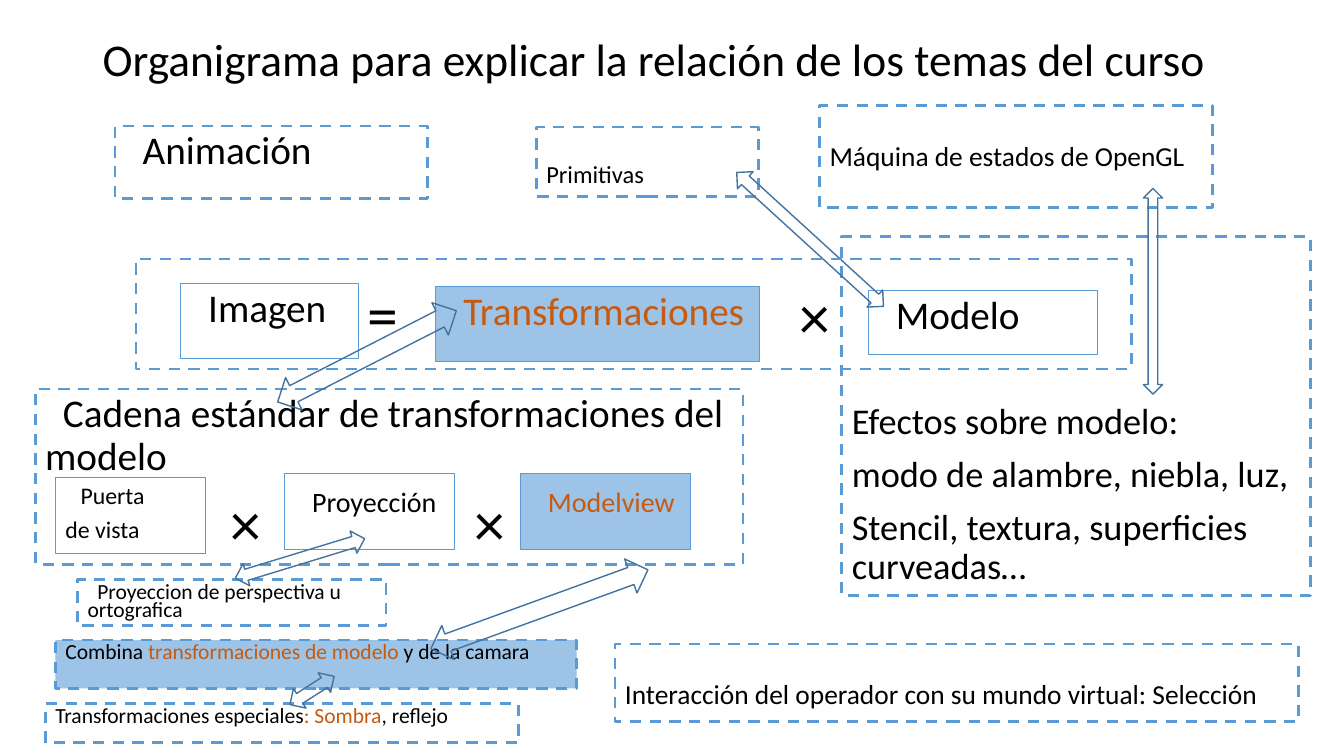
from pptx import Presentation
from pptx import util as u
from pptx.dml.color import RGBColor
from pptx.enum import dml, shapes, text

WIDE, HIGH = 13.33, 7.5
CELL = 0.1  # grid step in inches: columns and rows alike
INK, RUST = "000000", "C55A11"
BLUE, SKY, STEEL = "5B9BD5", "9DC3E6", "43739E"


def grid(*cells):
    return [u.Inches(n * CELL) for n in cells]


def color(code):
    return RGBColor.from_string(code)


def write(shape, lines, size, tight=0.9, lead=0, drop=0):
    """Fill a shape with lines; every second part between bars is rust.

    lead indents the first line, drop lowers the text, both in points.
    """
    frame = shape.text_frame
    frame.word_wrap = True
    frame.vertical_anchor = text.MSO_ANCHOR.TOP
    frame.margin_top = u.Pt(3.6 + drop)
    for i, line in enumerate(lines):
        para = frame.paragraphs[0] if i == 0 else frame.add_paragraph()
        para.alignment = text.PP_ALIGN.LEFT
        para.line_spacing = tight
        para.space_before = u.Pt(10 if i else 0)
        if i == 0 and lead:
            props = para._p.get_or_add_pPr()
            props.set("marL", "0")
            props.set("indent", str(u.Pt(lead)))
        for j, part in enumerate(line.split("|")):
            if not part:
                continue
            run = para.add_run()
            run.text = part
            run.font.name = "Calibri"
            run.font.size = u.Pt(size)
            run.font.color.rgb = color(RUST if j % 2 else INK)


def label(slide, cells, line, size):
    box = slide.shapes.add_textbox(*grid(*cells))
    write(box, [line], size)
    return box


def outline(slide, kind, cells, tint, weight, fill=None):
    shape = slide.shapes.add_shape(kind, *grid(*cells))
    shape.shadow.inherit = False
    shape.line.color.rgb = color(tint)
    shape.line.width = u.Pt(weight)
    if fill:
        shape.fill.solid()
        shape.fill.fore_color.rgb = color(fill)
    else:
        shape.fill.background()
    return shape


def term(slide, cells, lines, size=28, fill=None, **style):
    """Thin-edged box: one factor of a product."""
    box = outline(slide, shapes.MSO_SHAPE.RECTANGLE, cells, BLUE, 0.75, fill)
    write(box, lines, size, **style)


def topic(slide, cells, lines=(), size=28, fill=None, **style):
    """Dashed box: a subject of the course."""
    box = outline(slide, shapes.MSO_SHAPE.RECTANGLE, cells, BLUE, 2, fill)
    box.line.dash_style = dml.MSO_LINE.DASH
    write(box, lines, size, **style)


def arrow(slide, cells, turn=0, shaft=0.265):
    shape = outline(slide, shapes.MSO_SHAPE.UP_DOWN_ARROW, cells, STEEL, 1)
    shape.adjustments[0] = shaft
    shape.adjustments[1] = 0.5
    shape.rotation = turn


def sign(slide, col, row, mark):
    label(slide, (col, row, 5.3, 8.2), mark, 44)


def main():
    deck = Presentation()
    deck.slide_width, deck.slide_height = u.Inches(WIDE), u.Inches(HIGH)
    slide = deck.slides.add_slide(deck.slide_layouts[6])

    title = label(slide, (9.2, 1, 115, 10.3),
                  "Organigrama para explicar la relación de los temas del curso", 32.4)
    title.text_frame.vertical_anchor = text.MSO_ANCHOR.MIDDLE

    # Main product
    term(slide, (43.2, 28.4, 32.1, 7.5), ["|Transformaciones"], fill=SKY, lead=12.7)
    term(slide, (86.1, 28.8, 22.8, 6.4), ["Modelo"], lead=12.7)
    sign(slide, 78.3, 27.9, "×")
    term(slide, (17.9, 28.1, 17.7, 7.5), ["Imagen"], lead=12.7)
    sign(slide, 35.5, 27.7, "=")
    topic(slide, (11.4, 12.5, 31, 7.2), ["Animación"], lead=12.7)

    # Standard chain of the model
    topic(slide, (3.5, 38.6, 70.2, 17.4),
          ["Cadena estándar de transformaciones del modelo"], lead=12.7)
    term(slide, (5.5, 47.4, 14.9, 7.5), ["Puerta", "de vista"], 17,
         tight=0.7, lead=10.8, drop=4)
    for col, name, fill in ((28.2, "Proyección", None), (51.6, "|Modelview", SKY)):
        term(slide, (col, 47, 16.9, 7.5), [name], 20, fill, lead=12.7, drop=6.6)
    for col in (46.1, 21.9):
        sign(slide, col, 48.4, "×")

    # Subjects and the arrows that relate them
    topic(slide, (83.5, 23.5, 46.5, 35.6),
          ["Efectos sobre modelo:", "modo de alambre, niebla, luz,",
           "Stencil, textura, superficies curveadas…"], 25.9, drop=115)
    topic(slide, (61, 63.9, 67.8, 7.7),
          ["Interacción del operador con su mundo virtual: Selección"],
          19.6, tight=0.7, drop=26.7)
    arrow(slide, (34.6, 25.4, 3.6, 19.9), 62.9)
    topic(slide, (5.5, 63.5, 51.7, 4.8),
          ["Combina |transformaciones de modelo |y de la camara"],
          15.4, SKY, tight=0.7)
    arrow(slide, (51.7, 49, 3.6, 22.9), 70)
    topic(slide, (7.7, 57.5, 30.6, 4.6),
          ["Proyeccion de perspectiva u ortografica"], 15.4, tight=0.7, lead=7)
    arrow(slide, (28.6, 48.7, 2.3, 13.4), 73)
    topic(slide, (53.2, 12.6, 22, 6.9), ["Primitivas"], 17.5, tight=0.7, drop=24.9)
    arrow(slide, (79.2, 13.9, 2.3, 19.7), 312.4)
    topic(slide, (81.3, 10.5, 39, 10.1), ["Máquina de estados de OpenGL"],
          19.6, tight=0.7, drop=26.7)
    arrow(slide, (113.4, 18.7, 1.9, 20.4), shaft=0.655)
    topic(slide, (4.5, 69.8, 46.9, 3.9),
          ["Transformaciones especiales|: Sombra|, reflejo"], 15.4, tight=0.7)
    arrow(slide, (29.8, 65.9, 2.3, 5.2), 57.4)
    topic(slide, (13.5, 25.7, 98.7, 10.9))

    deck.save("out.pptx")


if __name__ == "__main__":
    main()
